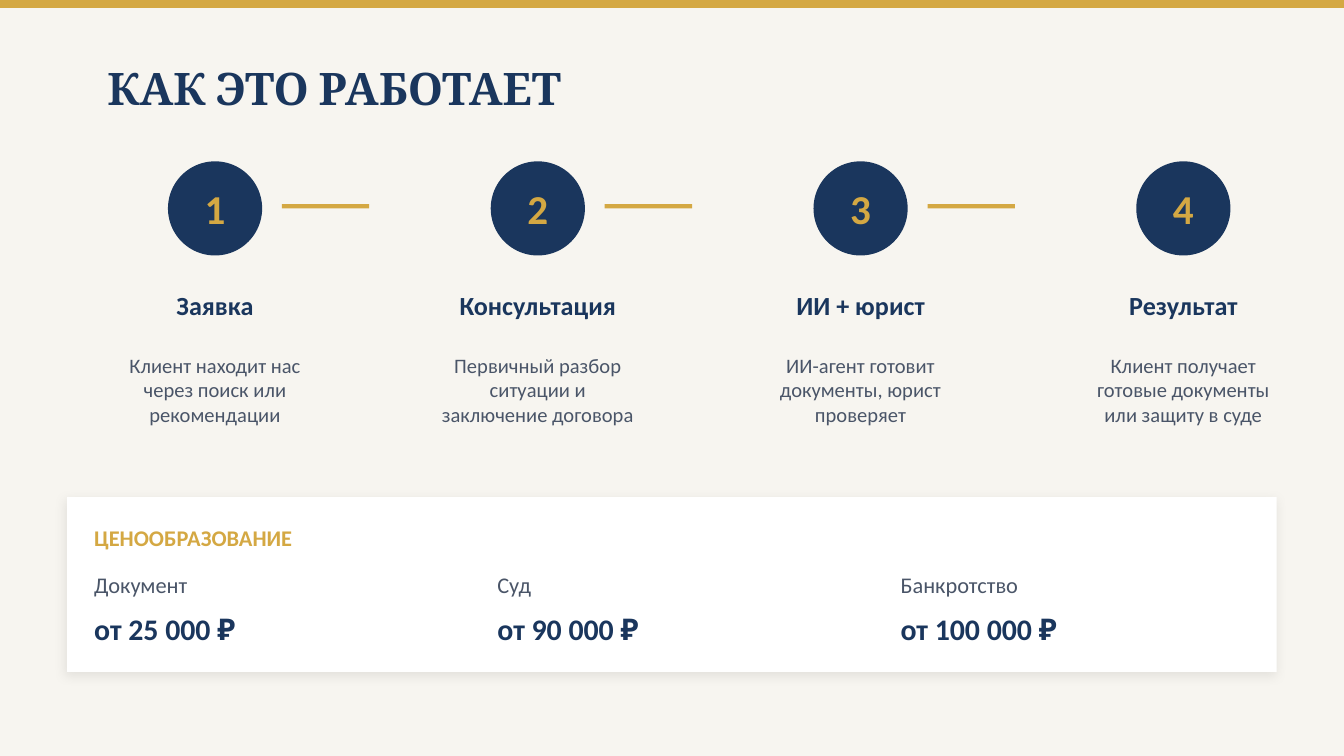
from lxml import etree
from pptx import Presentation
from pptx.dml.color import RGBColor
from pptx.enum.shapes import MSO_SHAPE
from pptx.enum.text import MSO_ANCHOR, MSO_AUTO_SIZE, PP_ALIGN
from pptx.oxml.ns import qn
from pptx.util import Cm, Pt

RECTANGLE, OVAL = MSO_SHAPE.RECTANGLE, MSO_SHAPE.OVAL
LEFT, CENTER = PP_ALIGN.LEFT, PP_ALIGN.CENTER
MIDDLE = MSO_ANCHOR.MIDDLE
NO_AUTOFIT = MSO_AUTO_SIZE.NONE
TITLE_ONLY = 5

COLORS = {
    "paper": "F7F5F0",
    "gold": "D4A843",
    "navy": "1A365D",
    "slate": "4A5568",
    "white": "FFFFFF",
    "shadow": "000000",
}

STEPS = [
    ("Заявка", ["Клиент находит нас", "через поиск или", "рекомендации"]),
    ("Консультация", ["Первичный разбор", "ситуации и", "заключение договора"]),
    ("ИИ + юрист", ["ИИ-агент готовит", "документы, юрист", "проверяет"]),
    ("Результат", ["Клиент получает", "готовые документы", "или защиту в суде"]),
]
PRICES = [
    ("Документ", "от 25 000 ₽"),
    ("Суд", "от 90 000 ₽"),
    ("Банкротство", "от 100 000 ₽"),
]

MARGIN = 1.27
STEP_PITCH, STEP_WIDTH = 6.1, 5.59
CIRCLE = 1.78
PRICE_LEFT, PRICE_PITCH, PRICE_WIDTH = 1.78, 7.62, 6.35


def rgb(name):
    return RGBColor.from_string(COLORS[name])


def place(box, left, top, width, height):
    box.left, box.top = Cm(left), Cm(top)
    box.width, box.height = Cm(width), Cm(height)


def write(box, lines, size, color, bold=False, align=LEFT, font="Calibri"):
    frame = box.text_frame
    frame.margin_left = frame.margin_right = 0
    frame.margin_top = frame.margin_bottom = 0
    frame.word_wrap = True
    frame.auto_size = NO_AUTOFIT
    frame.vertical_anchor = MIDDLE
    frame.text = "\n".join(lines)
    for paragraph in frame.paragraphs:
        paragraph.alignment = align
        paragraph.font.name = font
        paragraph.font.size = Pt(size)
        paragraph.font.bold = bold
        paragraph.font.color.rgb = rgb(color)


def add_text(slide, area, lines, size, color, **style):
    box = slide.shapes.add_textbox(*map(Cm, area))
    write(box, lines, size, color, **style)


def add_block(slide, kind, area, color):
    block = slide.shapes.add_shape(kind, *map(Cm, area))
    block.shadow.inherit = False
    block.fill.solid()
    block.fill.fore_color.rgb = rgb(color)
    block.line.fill.background()
    return block


def add_soft_shadow(block):
    effects = block._element.spPr.find(qn("a:effectLst"))
    shadow = etree.SubElement(
        effects, qn("a:outerShdw"), blurRad=str(Pt(6)), dist=str(Pt(2)),
        dir=str(135 * 60000), algn="bl", rotWithShape="0")
    tint = etree.SubElement(shadow, qn("a:srgbClr"), val=COLORS["shadow"])
    etree.SubElement(tint, qn("a:alpha"), val="8000")


def add_title(slide, text):
    title = slide.shapes.title
    place(title, 2.03, 1.02, 21.34, 1.27)
    write(title, [text], 24, "navy", bold=True, font="Cambria")


def add_step(slide, index, heading, description):
    left = MARGIN + index * STEP_PITCH
    circle_left = left + (STEP_WIDTH - CIRCLE) / 2
    circle = add_block(slide, OVAL, (circle_left, 3.05, CIRCLE, CIRCLE), "navy")
    write(circle, [str(index + 1)], 22, "gold", bold=True, align=CENTER)
    if index < len(STEPS) - 1:
        add_block(slide, RECTANGLE, (left + 4.06, 3.86, 1.65, 0.08), "gold")
    add_text(slide, (left, 5.33, STEP_WIDTH, 0.89), [heading], 14, "navy",
             bold=True, align=CENTER)
    add_text(slide, (left, 6.22, STEP_WIDTH, 2.29), description, 11, "slate",
             align=CENTER)


def add_pricing(slide):
    panel = add_block(slide, RECTANGLE, (MARGIN, 9.4, 22.86, 3.3), "white")
    add_soft_shadow(panel)
    add_text(slide, (PRICE_LEFT, 9.65, PRICE_WIDTH, 1.02), ["ЦЕНООБРАЗОВАНИЕ"],
             12, "gold", bold=True)
    for index, (service, price) in enumerate(PRICES):
        left = PRICE_LEFT + index * PRICE_PITCH
        add_text(slide, (left, 10.67, PRICE_WIDTH, 0.76), [service], 12, "slate")
        add_text(slide, (left, 11.43, PRICE_WIDTH, 0.89), [price], 16, "navy",
                 bold=True)


def main():
    deck = Presentation()
    deck.slide_width, deck.slide_height = Cm(25.4), Cm(14.29)
    slide = deck.slides.add_slide(deck.slide_layouts[TITLE_ONLY])
    slide.background.fill.solid()
    slide.background.fill.fore_color.rgb = rgb("paper")
    add_block(slide, RECTANGLE, (0, 0, 25.4, 0.15), "gold")
    add_title(slide, "КАК ЭТО РАБОТАЕТ")
    for index, (heading, description) in enumerate(STEPS):
        add_step(slide, index, heading, description)
    add_pricing(slide)
    deck.save("out.pptx")


if __name__ == "__main__":
    main()
